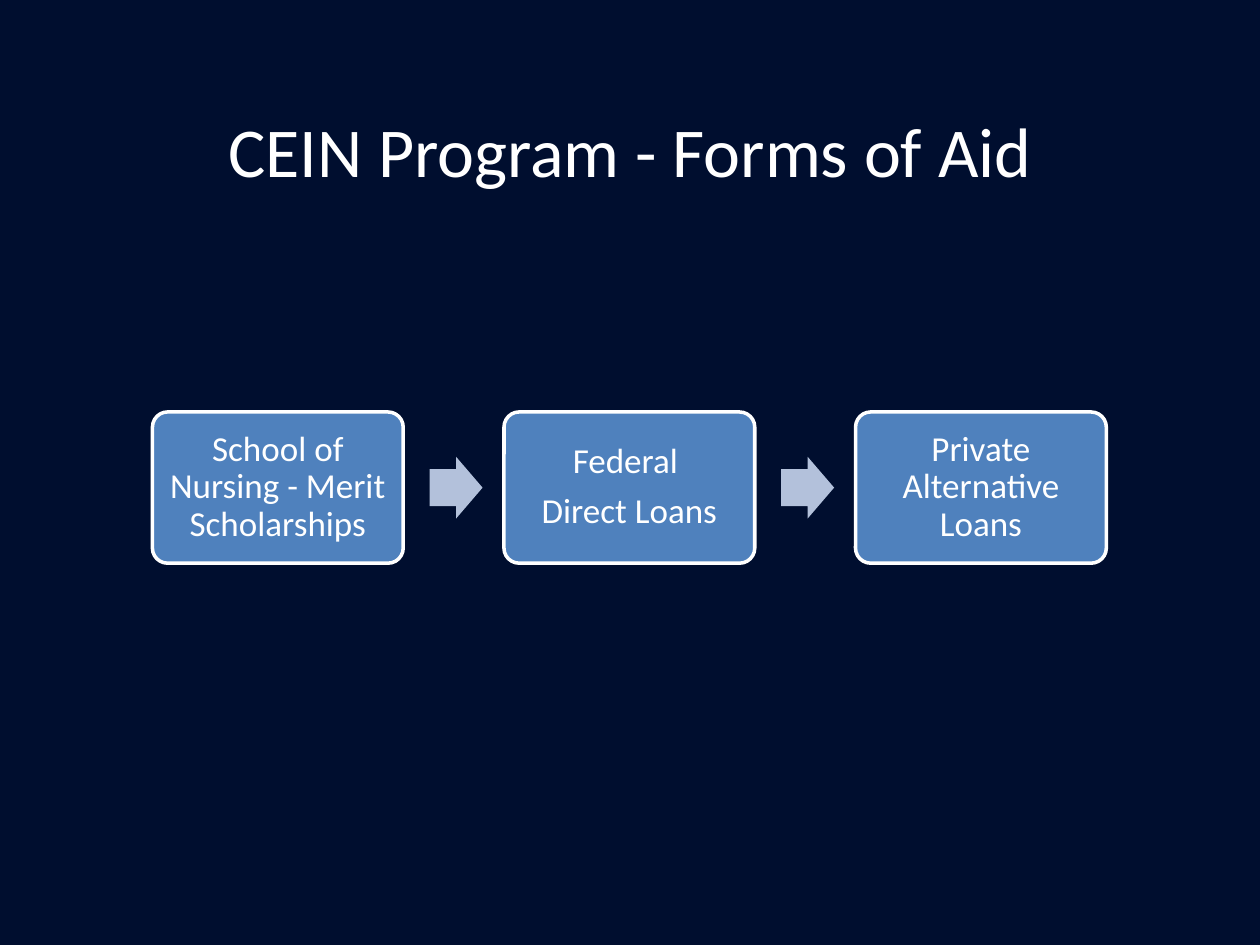
from pptx import Presentation
from pptx.dml.color import RGBColor
from pptx.enum.shapes import MSO_SHAPE as Shape
from pptx.enum.text import MSO_ANCHOR as Anchor, PP_ALIGN as Align
from pptx.util import Inches, Pt

COLORS = {"navy": "000E2F", "blue": "4F81BD", "pale": "B3C1DB", "white": "FFFFFF"}
FONT = "Calibri"
AID_FORMS = [
    "School of Nursing - Merit Scholarships",
    "Federal \nDirect Loans",
    "Private Alternative Loans",
]
FIRST_LEFT, STEP = 1.21, 2.79
BOX_TOP, BOX_WIDTH, BOX_HEIGHT = 3.27, 1.99, 1.2
ARROW_OFFSET, ARROW_WIDTH, ARROW_HEIGHT = 2.2, 0.42, 0.49


def color(name):
    return RGBColor.from_string(COLORS[name])


def write(frame, text, size):
    frame.word_wrap = True
    frame.vertical_anchor = Anchor.MIDDLE
    frame.text = text
    for paragraph in frame.paragraphs:
        paragraph.alignment = Align.CENTER
        for run in paragraph.runs:
            run.font.name = FONT
            run.font.size = Pt(size)
            run.font.color.rgb = color("white")


def add_title(slide, text):
    title = slide.shapes.add_textbox(Inches(0.5), Inches(0.59), Inches(9), Inches(1.2))
    write(title.text_frame, text, 40)


def add_block(slide, kind, left, top, width, height, fill):
    block = slide.shapes.add_shape(
        kind, Inches(left), Inches(top), Inches(width), Inches(height))
    block.shadow.inherit = False
    block.fill.solid()
    block.fill.fore_color.rgb = color(fill)
    return block


def add_aid_box(slide, left, text):
    box = add_block(slide, Shape.ROUNDED_RECTANGLE, left, BOX_TOP,
                    BOX_WIDTH, BOX_HEIGHT, "blue")
    box.adjustments[0] = 0.1
    box.line.color.rgb = color("white")
    box.line.width = Pt(2)
    frame = box.text_frame
    frame.margin_left = frame.margin_right = Inches(0.08)
    frame.margin_top = frame.margin_bottom = Inches(0.08)
    write(frame, text, 20)
    for paragraph in frame.paragraphs:
        paragraph.line_spacing = 0.9
    for paragraph in frame.paragraphs[:-1]:
        paragraph.space_after = Pt(7)


def add_arrow(slide, left):
    top = BOX_TOP + (BOX_HEIGHT - ARROW_HEIGHT) / 2
    arrow = add_block(slide, Shape.RIGHT_ARROW, left, top,
                      ARROW_WIDTH, ARROW_HEIGHT, "pale")
    arrow.adjustments[0] = 0.6
    arrow.adjustments[1] = 0.5
    arrow.line.fill.background()


def main():
    deck = Presentation()
    deck.slide_width, deck.slide_height = Inches(10), Inches(7.5)
    slide = deck.slides.add_slide(deck.slide_layouts[6])
    slide.background.fill.solid()
    slide.background.fill.fore_color.rgb = color("navy")

    add_title(slide, "CEIN Program - Forms of Aid")
    for index, aid in enumerate(AID_FORMS):
        left = FIRST_LEFT + index * STEP
        add_aid_box(slide, left, aid)
        if index < len(AID_FORMS) - 1:
            add_arrow(slide, left + ARROW_OFFSET)
    deck.save("out.pptx")


if __name__ == "__main__":
    main()
